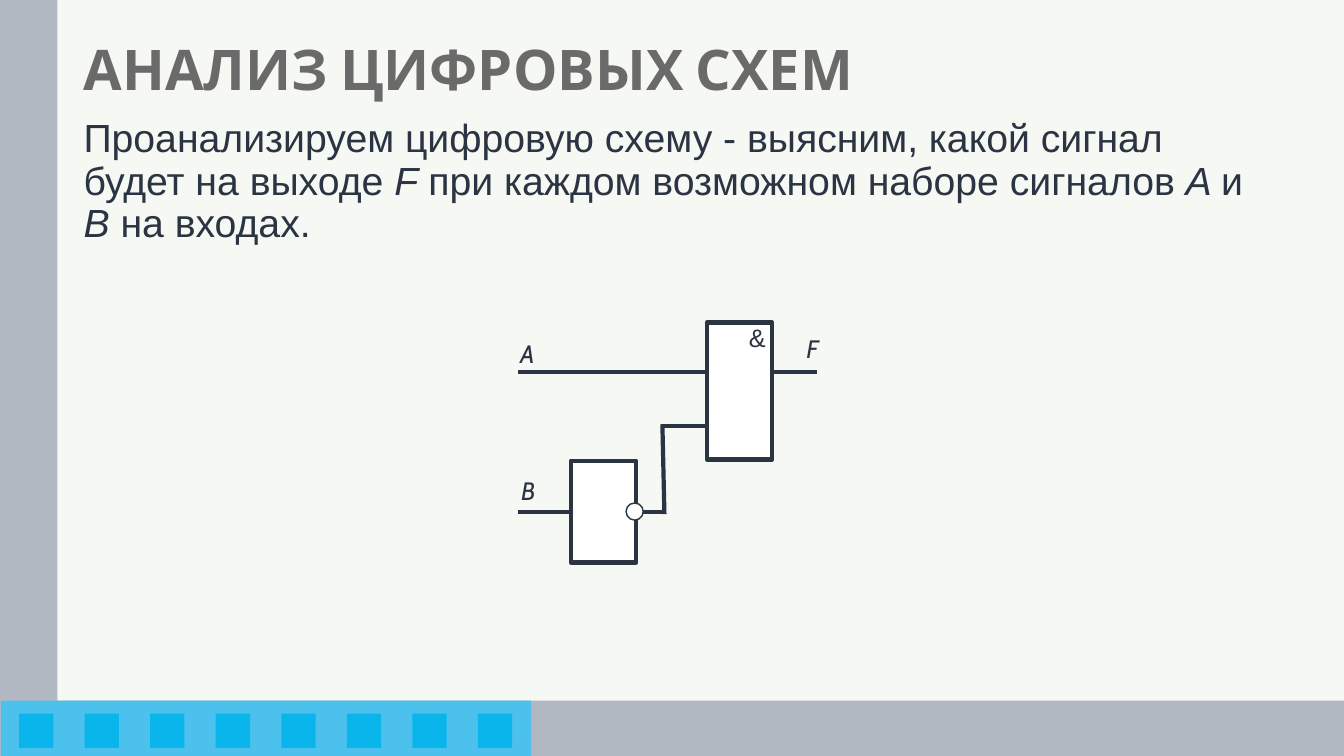
from dataclasses import dataclass

from lxml.etree import SubElement
from pptx import Presentation
from pptx.dml.color import RGBColor
from pptx.enum.shapes import MSO_CONNECTOR as Connector
from pptx.enum.shapes import MSO_SHAPE as Preset
from pptx.enum.text import MSO_ANCHOR as Anchor
from pptx.enum.text import MSO_AUTO_SIZE as AutoSize
from pptx.enum.text import PP_ALIGN as Align
from pptx.oxml.ns import qn
from pptx.slide import Slide
from pptx.util import Inches, Pt

INK = "2A3442"
WHITE = "FFFFFF"
BAND = "B2B8C2"


@dataclass(frozen=True)
class Block:
    left: float
    top: float
    width: float
    height: float
    fill: str
    border: float = 0
    preset: Preset = Preset.RECTANGLE


@dataclass(frozen=True)
class Wire:
    x1: float
    y1: float
    x2: float
    y2: float


@dataclass(frozen=True)
class Phrase:
    text: str
    italic: bool = False


@dataclass(frozen=True)
class Caption:
    left: float
    top: float
    width: float
    height: float
    phrases: tuple[Phrase, ...]
    font: dict
    frame: dict
    paragraph: dict
    color: str = INK


def rgb(value: str) -> RGBColor:
    return RGBColor.from_string(value)


def apply_format(target: object, values: dict) -> None:
    for name, value in values.items():
        setattr(target, name, value)


def draw_block(slide: Slide, block: Block) -> None:
    shape = slide.shapes.add_shape(
        block.preset, Inches(block.left), Inches(block.top), Inches(block.width), Inches(block.height)
    )
    shape.shadow.inherit = False
    shape.fill.solid()
    shape.fill.fore_color.rgb = rgb(block.fill)
    if block.border:
        shape.line.color.rgb = rgb(INK)
        shape.line.width = Pt(block.border)
    else:
        shape.line.fill.background()


def draw_wire(slide: Slide, wire: Wire) -> None:
    connector = slide.shapes.add_connector(
        Connector.STRAIGHT, Inches(wire.x1), Inches(wire.y1), Inches(wire.x2), Inches(wire.y2)
    )
    connector.line.color.rgb = rgb(INK)
    connector.line.width = Pt(3)
    SubElement(connector._element.spPr, qn("a:effectLst"))


def draw_caption(slide: Slide, caption: Caption) -> None:
    box = slide.shapes.add_textbox(
        Inches(caption.left), Inches(caption.top), Inches(caption.width), Inches(caption.height)
    )
    apply_format(box.text_frame, {"word_wrap": True, **caption.frame})
    paragraph = box.text_frame.paragraphs[0]
    apply_format(paragraph, caption.paragraph)
    for phrase in caption.phrases:
        run = paragraph.add_run()
        run.text = phrase.text
        apply_format(run.font, {**caption.font, "italic": phrase.italic})
        run.font.color.rgb = rgb(caption.color)


def signal_label(left: float, top: float, text: str, font: str = "Cabin") -> Caption:
    return Caption(
        left, top, 0.3, 0.4, (Phrase(text, font == "Cabin"),),
        {"name": font, "size": Pt(18)}, {"auto_size": AutoSize.SHAPE_TO_FIT_TEXT}, {},
    )


SQUARE_COUNT = 8
SQUARE_STEP = 0.65

DECORATION = (
    Block(0, 0, 0.57, 7.5, BAND),
    Block(0, 6.95, 13.33, 0.55, BAND),
    Block(0.01, 6.95, 5.26, 0.55, "4DC1ED"),
    *(Block(0.19 + SQUARE_STEP * i, 7.08, 0.34, 0.34, "0AB5EC") for i in range(SQUARE_COUNT)),
)

HEADING = Caption(
    0.73, -0.01, 11.88, 1.45,
    (Phrase("АНАЛИЗ ЦИФРОВЫХ СХЕМ"),),
    {"name": "Cabin", "size": Pt(40), "bold": True},
    {"vertical_anchor": Anchor.MIDDLE},
    {"alignment": Align.JUSTIFY, "line_spacing": 0.9},
    "6A6A6A",
)

TASK = Caption(
    0.73, 1.13, 11.88, 4.97,
    (
        Phrase("Проанализируем цифровую схему - выясним, какой сигнал будет на выходе "),
        Phrase("F ", True),
        Phrase("при каждом возможном наборе сигналов "),
        Phrase("A ", True),
        Phrase("и "),
        Phrase("B ", True),
        Phrase("на входах."),
    ),
    {"name": "Arial", "size": Pt(28)},
    {"vertical_anchor": Anchor.TOP},
    {"line_spacing": 0.9, "space_before": Pt(10)},
)

SIGNAL_WIRES = (
    Wire(7.01, 4.23, 6.56, 4.23),
    Wire(6.59, 5.08, 5.14, 5.08),
    Wire(8.1, 3.69, 5.14, 3.69),
)
GATES = (
    Block(5.66, 4.57, 0.65, 1.01, WHITE, 3),
    Block(7.01, 3.2, 0.65, 1.36, WHITE, 3),
    Block(6.21, 4.99, 0.17, 0.17, WHITE, 1, Preset.OVAL),
)
INVERTED_RISER = Wire(6.59, 5.1, 6.57, 4.21)
SIGNAL_LABELS = (
    signal_label(5.06, 3.31, "A"),
    signal_label(5.07, 4.67, "B"),
    signal_label(7.9, 3.26, "F"),
    signal_label(7.33, 3.15, "&", "Arial"),
)


def main() -> None:
    deck = Presentation()
    apply_format(deck, {"slide_width": Inches(13.33), "slide_height": Inches(7.5)})
    slide = deck.slides.add_slide(deck.slide_layouts[6])
    slide.background.fill.solid()
    slide.background.fill.fore_color.rgb = rgb("F6F8F3")

    for block in DECORATION:
        draw_block(slide, block)
    for caption in (HEADING, TASK):
        draw_caption(slide, caption)
    for wire in SIGNAL_WIRES:
        draw_wire(slide, wire)
    for gate in GATES:
        draw_block(slide, gate)
    draw_wire(slide, INVERTED_RISER)
    for label in SIGNAL_LABELS:
        draw_caption(slide, label)

    deck.save("out.pptx")


if __name__ == "__main__":
    main()
